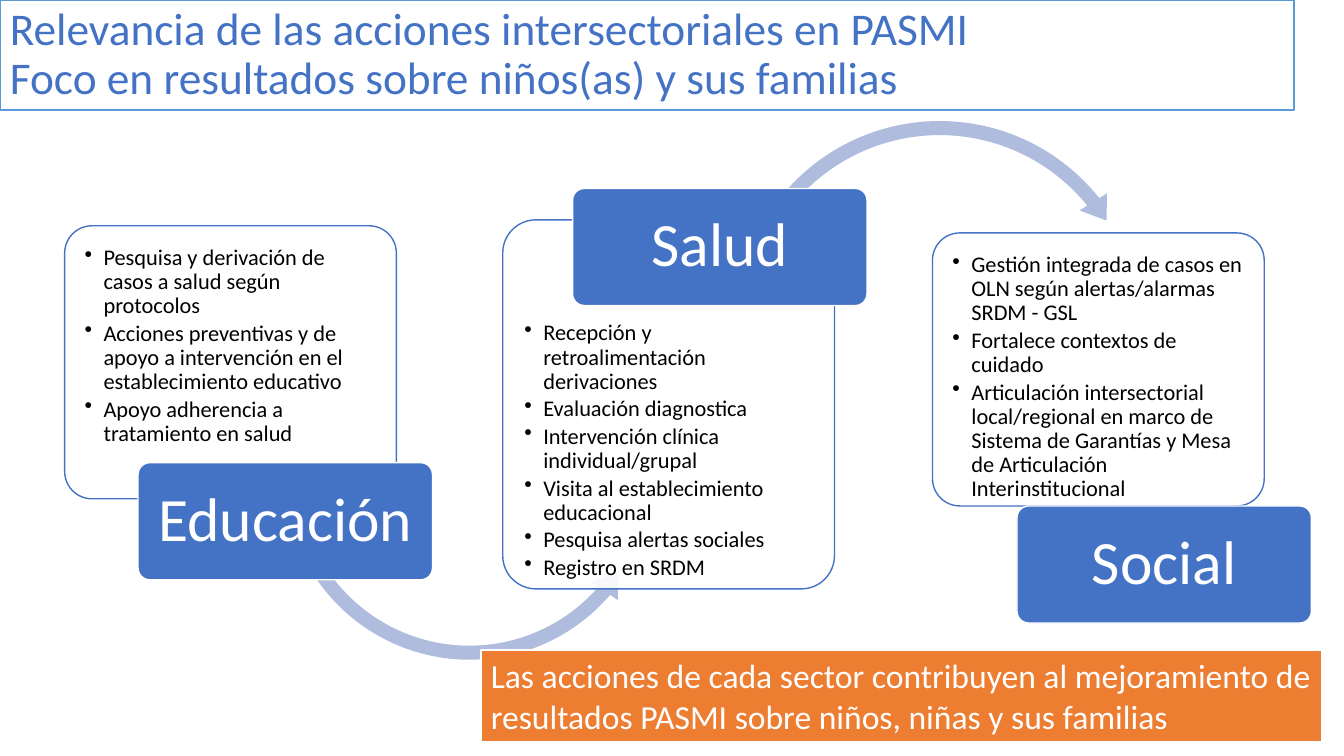
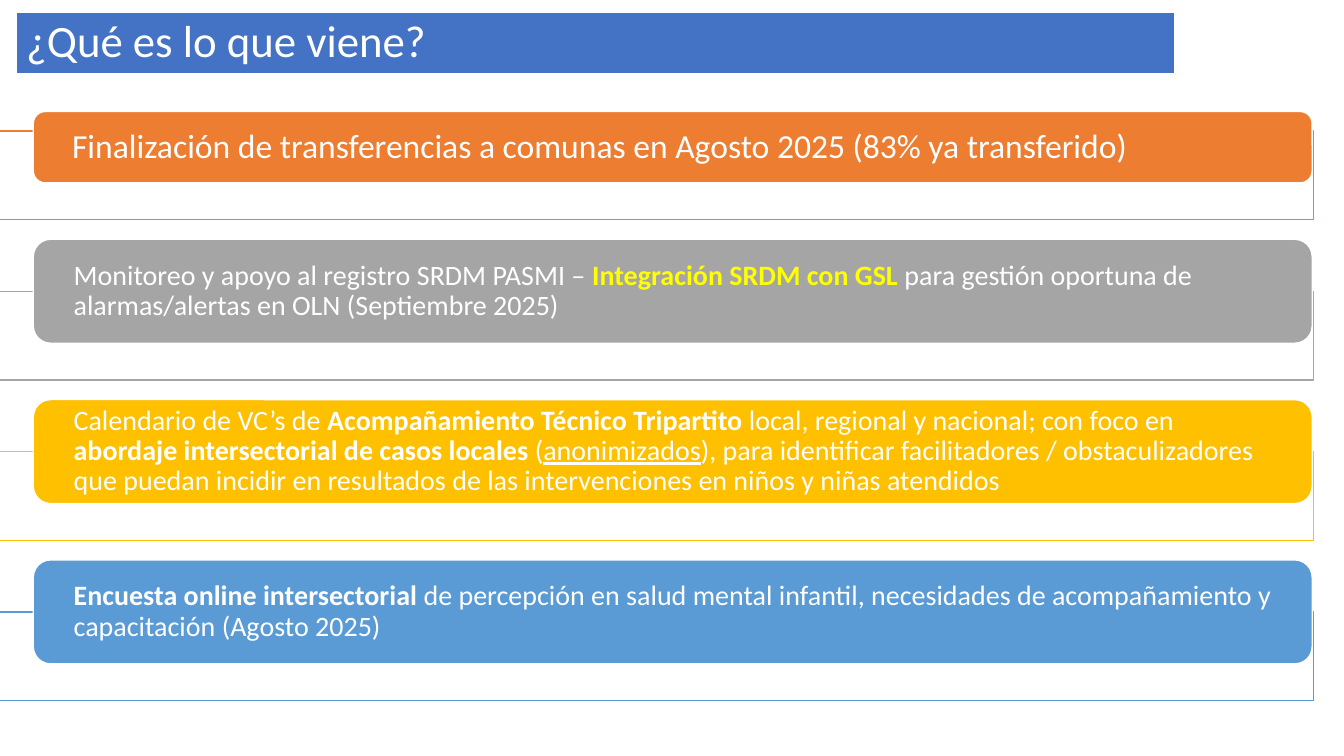
from lxml.etree import SubElement
from pptx import Presentation
from pptx.dml.color import RGBColor
from pptx.enum.shapes import MSO_SHAPE as Shape
from pptx.enum.text import MSO_ANCHOR as Anchor, PP_ALIGN as Align
from pptx.oxml.ns import qn
from pptx.util import Cm, Pt

COLORS = {
    "white": "FFFFFF",
    "black": "000000",
    "blue": "4472C4",
    "sky": "5B9BD5",
    "orange": "ED7D31",
    "gray": "A5A5A5",
    "gold": "FFC000",
    "yellow": "FFFF00",
    "lavender": "B0BCDE",
}
BREAK = "\n"
BOLD = {"bold": True}


class Deck:
    """The shared style and the slide being filled; lengths are in centimetres."""

    font = "Calibri"

    def __init__(self):
        self.presentation = Presentation()
        self.presentation.slide_width = Cm(33.87)
        self.presentation.slide_height = Cm(19.05)
        self.slide = None

    def new_slide(self):
        layout = self.presentation.slide_layouts[6]
        self.slide = self.presentation.slides.add_slide(layout)

    def color(self, name):
        return RGBColor.from_string(COLORS[name])

    def shape(self, kind, box, fill, line=None, line_width=1, adjustments=(), opacity=None):
        shape = self.slide.shapes.add_shape(kind, *map(Cm, box))
        shape.shadow.inherit = False
        shape.fill.solid()
        shape.fill.fore_color.rgb = self.color(fill)
        if opacity:
            color = shape._element.spPr.find(qn("a:solidFill"))[0]
            SubElement(color, qn("a:alpha")).set("val", str(opacity * 1000))
        if line:
            shape.line.color.rgb = self.color(line)
            shape.line.width = Pt(line_width)
        else:
            shape.line.fill.background()
        for index, value in enumerate(adjustments):
            shape.adjustments[index] = value
        return shape

    def add_text(self, shape, paragraphs, size, color="white", margins=(0.25, 0.13, 0.25, 0.13),
                 anchor=Anchor.MIDDLE, bullet=False, **layout):
        """Fill a shape with paragraphs, each a list of strings or (string, font format) pairs."""
        frame = shape.text_frame
        sides = ("margin_left", "margin_top", "margin_right", "margin_bottom")
        settings = {"word_wrap": True, "vertical_anchor": anchor,
                    **dict(zip(sides, map(Cm, margins)))}
        for name, value in settings.items():
            setattr(frame, name, value)
        for index, segments in enumerate(paragraphs):
            paragraph = frame.add_paragraph() if index else frame.paragraphs[0]
            if bullet:
                self.add_bullet(paragraph)
            for name, value in {"alignment": Align.LEFT, "line_spacing": 0.9, **layout}.items():
                setattr(paragraph, name, value)
            for segment in segments:
                if segment == BREAK:
                    paragraph.add_line_break()
                    continue
                text, extra = (segment, {}) if isinstance(segment, str) else segment
                self.add_run(paragraph, text, {"size": Pt(size), "color": color, **extra})

    def add_run(self, paragraph, text, formats):
        run = paragraph.add_run()
        run.text = text
        run.font.name = self.font
        for name, value in formats.items():
            if name == "color":
                run.font.color.rgb = self.color(value)
            else:
                setattr(run.font, name, value)

    def add_bullet(self, paragraph):
        properties = paragraph._p.get_or_add_pPr()
        properties.set("marL", str(int(Cm(0.48))))
        properties.set("indent", str(-int(Cm(0.48))))
        SubElement(properties, qn("a:buChar")).set("char", "•")

    def title(self, box, segments, size, fill, line, line_width, color):
        shape = self.shape(Shape.RECTANGLE, box, fill, line, line_width)
        self.add_text(shape, [segments], size, color)

    def panel(self, box, top_margin, items):
        shape = self.shape(Shape.ROUNDED_RECTANGLE, box, "white", "blue",
                           adjustments=[0.1], opacity=90)
        self.add_text(shape, [[item] for item in items], 16, "black", (0.3, top_margin, 0.3, 0),
                      Anchor.TOP, bullet=True, space_after=Pt(2.4))

    def tag(self, left, top, text):
        shape = self.shape(Shape.ROUNDED_RECTANGLE, (left, top, 7.42, 2.95), "blue", "white",
                           adjustments=[0.1])
        self.add_text(shape, [[text]], 44, margins=(0.2, 0.15, 0.2, 0.15),
                      alignment=Align.CENTER)

    def arc_arrow(self, kind, left, top, side, adjustments):
        self.shape(kind, (left, top, side, side), "lavender", adjustments=adjustments)

    def banner(self, box, text):
        shape = self.shape(Shape.RECTANGLE, box, "orange", "white", 1.5)
        self.add_text(shape, [[text]], 24, margins=(0.25, 0.13, 0.2, 0.13),
                      anchor=Anchor.TOP, line_spacing=1.0)

    def step(self, frame_top, height, color, size, segments):
        """A coloured bar whose foot overlaps the outlined frame behind it."""
        self.shape(Shape.RECTANGLE, (-0.76, frame_top, 33.86, 2.24), "white", color, opacity=90)
        bar = self.shape(Shape.ROUNDED_RECTANGLE,
                         (0.84, frame_top + 1.31 - height, 32.23, height), color, "white")
        self.add_text(bar, [segments], size, margins=(0.89, 0, 0.8, 0))


def build_sectors(deck):
    deck.new_slide()
    deck.title((0, 0, 32.61, 2.77),
               ["Relevancia de las acciones intersectoriales en PASMI", BREAK,
                "Foco en resultados sobre niños(as) y sus familias"],
               32.4, "white", "sky", 1, "blue")

    deck.panel((1.63, 5.69, 8.36, 6.88), 0.31, [
        "Pesquisa y derivación de casos a salud según protocolos",
        "Acciones preventivas y de apoyo a intervención en el establecimiento educativo",
        "Apoyo adherencia a tratamiento en salud",
    ])
    deck.arc_arrow(Shape.LEFT_CIRCULAR_ARROW, 6.93, 7.06, 9.8,
                   [0.036, 4.44, 24.49, 92.54, 0.042])
    deck.tag(3.48, 11.66, "Educación")

    deck.panel((12.67, 5.54, 8.36, 9.3), 2.32, [
        "Recepción y retroalimentación derivaciones",
        "Evaluación diagnostica",
        "Intervención clínica individual/grupal",
        "Visita al establecimiento educacional",
        "Pesquisa alertas sociales",
        "Registro en SRDM",
    ])
    deck.arc_arrow(Shape.CIRCULAR_ARROW, 18.31, 2.82, 10.74,
                   [0.033, 4.02, 192.78, 124.31, 0.038])
    deck.tag(14.43, 4.75, "Salud")

    deck.panel((23.5, 5.87, 8.36, 6.88), 0.31, [
        "Gestión integrada de casos en OLN según alertas/alarmas SRDM - GSL",
        "Fortalece contextos de cuidado",
        "Articulación intersectorial local/regional en marco de Sistema de Garantías "
        "y Mesa de Articulación Interinstitucional",
    ])
    deck.tag(25.63, 12.75, "Social")

    deck.banner((12.12, 16.38, 21.21, 2.31),
                "Las acciones de cada sector contribuyen al mejoramiento de resultados PASMI "
                "sobre niños, niñas y sus familias")


def build_next_steps(deck):
    deck.new_slide()
    deck.title((0.41, 0.3, 29.21, 1.57), ["¿Qué es lo que viene?"],
               32, "blue", "white", 1.5, "white")
    steps = [
        (1.8, "orange", 24, [
            "Finalización de transferencias a comunas en Agosto 2025 (83% ya transferido)"]),
        (2.62, "gray", 20, [
            "Monitoreo y apoyo al registro SRDM PASMI – ",
            ("Integración SRDM con GSL ", {"bold": True, "color": "yellow"}),
            "para gestión oportuna de alarmas/alertas en OLN (Septiembre 2025)"]),
        (2.62, "gold", 20, [
            "Calendario de VC’s de ",
            ("Acompañamiento Técnico Tripartito ", BOLD),
            "local, regional y nacional; con foco en ",
            ("abordaje intersectorial de casos locales ", BOLD),
            "(",
            ("anonimizados", {"underline": True}),
            "), para identificar facilitadores / obstaculizadores que puedan incidir en "
            "resultados de las intervenciones en niños y niñas atendidos"]),
        (2.62, "sky", 20, [
            ("Encuesta online intersectorial", BOLD),
            " de percepción en salud mental infantil, necesidades de acompañamiento y "
            "capacitación (Agosto 2025)"]),
    ]
    for index, step in enumerate(steps):
        deck.step(3.3 + 4.04 * index, *step)


def main():
    deck = Deck()
    build_sectors(deck)
    build_next_steps(deck)
    deck.presentation.save("out.pptx")


if __name__ == "__main__":
    main()
